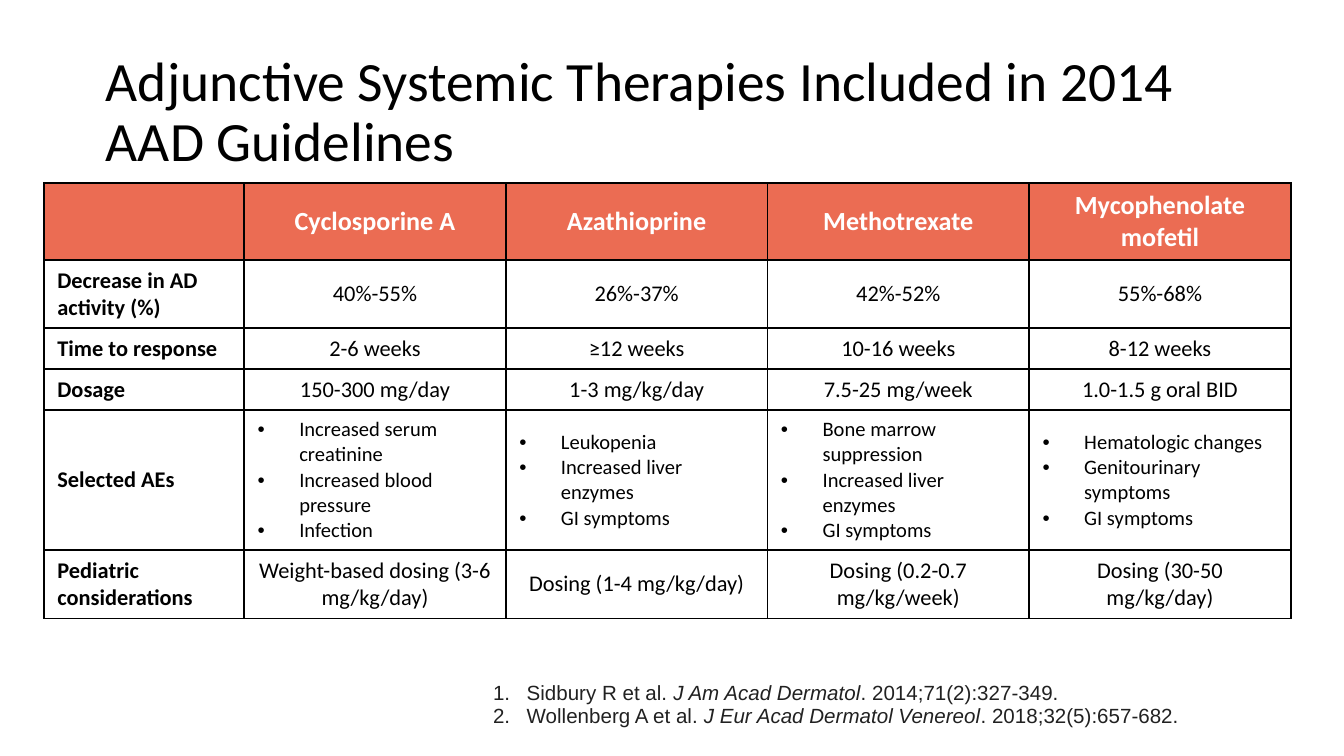
import lxml.etree
import pptx
import pptx.dml.color
import pptx.enum.text
import pptx.oxml.ns
import pptx.util

RGBColor = pptx.dml.color.RGBColor
BLACK = RGBColor(0x00, 0x00, 0x00)
WHITE = RGBColor(0xFF, 0xFF, 0xFF)
CORAL = RGBColor(0xEB, 0x6C, 0x53)
CHARCOAL = RGBColor(0x21, 0x21, 0x21)

LEFT = pptx.enum.text.PP_ALIGN.LEFT
CENTER = pptx.enum.text.PP_ALIGN.CENTER
MIDDLE = pptx.enum.text.MSO_ANCHOR.MIDDLE
TITLE_ONLY = 5

TITLE = "Adjunctive Systemic Therapies Included in 2014 AAD Guidelines"
THERAPIES = ["", "Cyclosporine A", "Azathioprine", "Methotrexate", "Mycophenolate mofetil"]
# A list inside a row is a bulleted cell.
COMPARISON = [
    ["Decrease in AD activity (%)", "40%-55%", "26%-37%", "42%-52%", "55%-68%"],
    ["Time to response", "2-6 weeks", "≥12 weeks", "10-16 weeks", "8-12 weeks"],
    ["Dosage", "150-300 mg/day", "1-3 mg/kg/day", "7.5-25 mg/week", "1.0-1.5 g oral BID"],
    ["Selected AEs",
     ["Increased serum creatinine", "Increased blood pressure", "Infection"],
     ["Leukopenia", "Increased liver enzymes", "GI symptoms"],
     ["Bone marrow suppression", "Increased liver enzymes", "GI symptoms"],
     ["Hematologic changes", "Genitourinary symptoms", "GI symptoms"]],
    ["Pediatric considerations", "Weight-based dosing (3-6 mg/kg/day)",
     "Dosing (1-4 mg/kg/day)", "Dosing (0.2-0.7 mg/kg/week)", "Dosing (30-50 mg/kg/day)"],
]
REFERENCES = [
    ("Sidbury R et al. ", "J Am Acad Dermatol", ". 2014;71(2):327-349."),
    ("Wollenberg A et al. ", "J Eur Acad Dermatol Venereol", ". 2018;32(5):657-682."),
]
# Shares of the slide, in percent
COLUMN_WIDTHS = [14.9] + [19.47] * 4
ROW_HEIGHTS = [10.2, 9, 5.42, 5.42, 18.5, 9]


def add_child(parent, tag, **attributes):
    child = lxml.etree.SubElement(parent, pptx.oxml.ns.qn(tag))
    for name, value in attributes.items():
        child.set(name, str(value))
    return child


def add_span(para, text, size, color=BLACK, font="Calibri", bold=False, italic=False):
    span = para.add_run()
    span.text = text
    span.font.name = font
    span.font.size = pptx.util.Pt(size)
    span.font.color.rgb = color
    span.font.bold = bold
    span.font.italic = italic


def add_list_mark(para, indent, tag, **attributes):
    """Hang the paragraph by indent inches behind a bullet or a number."""
    properties = para._p.get_or_add_pPr()
    hang = pptx.util.Inches(indent)
    properties.set("marL", str(hang))
    properties.set("indent", str(-hang))
    add_child(properties, "a:buFont", typeface="Arial")
    add_child(properties, tag, **attributes)


def paragraphs(frame, count):
    """Return the first paragraph of the frame and as many new ones as needed."""
    return [frame.paragraphs[0]] + [frame.add_paragraph() for _ in range(count - 1)]


def add_borders(cell, color, width):
    properties = cell._tc.get_or_add_tcPr()
    for tag in ("a:lnL", "a:lnR", "a:lnT", "a:lnB"):
        line = add_child(properties, tag, w=pptx.util.Pt(width))
        add_child(add_child(line, "a:solidFill"), "a:srgbClr", val=color)


class TherapySlide:
    """Holds the page and its style; positions are percent of the slide's size."""

    def __init__(self, deck):
        self.deck = deck
        self.page = deck.slides.add_slide(deck.slide_layouts[TITLE_ONLY])

    def across(self, share):
        return round(self.deck.slide_width * share / 100)

    def down(self, share):
        return round(self.deck.slide_height * share / 100)

    def area(self, left, top, width, height):
        return self.across(left), self.down(top), self.across(width), self.down(height)

    def title(self, text, left, top, width, height):
        box = self.page.shapes.title
        box.left, box.top, box.width, box.height = self.area(left, top, width, height)
        frame = box.text_frame
        frame.word_wrap = True
        frame.auto_size = pptx.enum.text.MSO_AUTO_SIZE.NONE
        frame.vertical_anchor = MIDDLE
        para = frame.paragraphs[0]
        para.alignment = LEFT
        para.line_spacing = 0.9
        add_span(para, text, 29.7)

    def table(self, rows, left, top, widths, heights):
        grid = self.page.shapes.add_table(
            len(rows), len(widths),
            *self.area(left, top, sum(widths), sum(heights))).table
        for column, width in zip(grid.columns, widths):
            column.width = self.across(width)
        for row, height in zip(grid.rows, heights):
            row.height = self.down(height)
        for row_index, row in enumerate(rows):
            for column_index, content in enumerate(row):
                self.cell(grid.cell(row_index, column_index), content,
                          header=row_index == 0, label=column_index == 0)

    def cell(self, cell, content, header, label):
        add_borders(cell, BLACK, 1)
        cell.fill.solid()
        cell.fill.fore_color.rgb = CORAL if header else WHITE
        cell.vertical_anchor = MIDDLE
        bulleted = isinstance(content, list)
        lines = content if bulleted else [content]
        size = 14 if header else 11 if bulleted else 12
        for para, line in zip(paragraphs(cell.text_frame, len(lines)), lines):
            para.alignment = LEFT if label or bulleted else CENTER
            if bulleted:
                add_list_mark(para, 0.31, "a:buChar", char="•")
            if line:
                add_span(para, line, size, color=WHITE if header else BLACK,
                         bold=header or label)

    def references(self, entries, left, top, width, height):
        box = self.page.shapes.add_textbox(*self.area(left, top, width, height))
        frame = box.text_frame
        frame.word_wrap = True
        for para, (authors, journal, issue) in zip(paragraphs(frame, len(entries)), entries):
            para.line_spacing = 0.9
            add_list_mark(para, 0.25, "a:buAutoNum", type="arabicPeriod")
            for text in (authors, journal, issue):
                add_span(para, text, 11, color=CHARCOAL, font="Arial",
                         italic=text == journal)


def main():
    deck = pptx.Presentation()
    deck.slide_width = pptx.util.Inches(10)
    deck.slide_height = deck.slide_width * 9 // 16
    slide = TherapySlide(deck)
    slide.title(TITLE, 6.88, 5.32, 86.25, 19.33)
    slide.table([THERAPIES] + COMPARISON, 3.27, 24.2, COLUMN_WIDTHS, ROW_HEIGHTS)
    slide.references(REFERENCES, 35.7, 89.5, 62.9, 8.9)
    deck.save("out.pptx")


if __name__ == "__main__":
    main()
